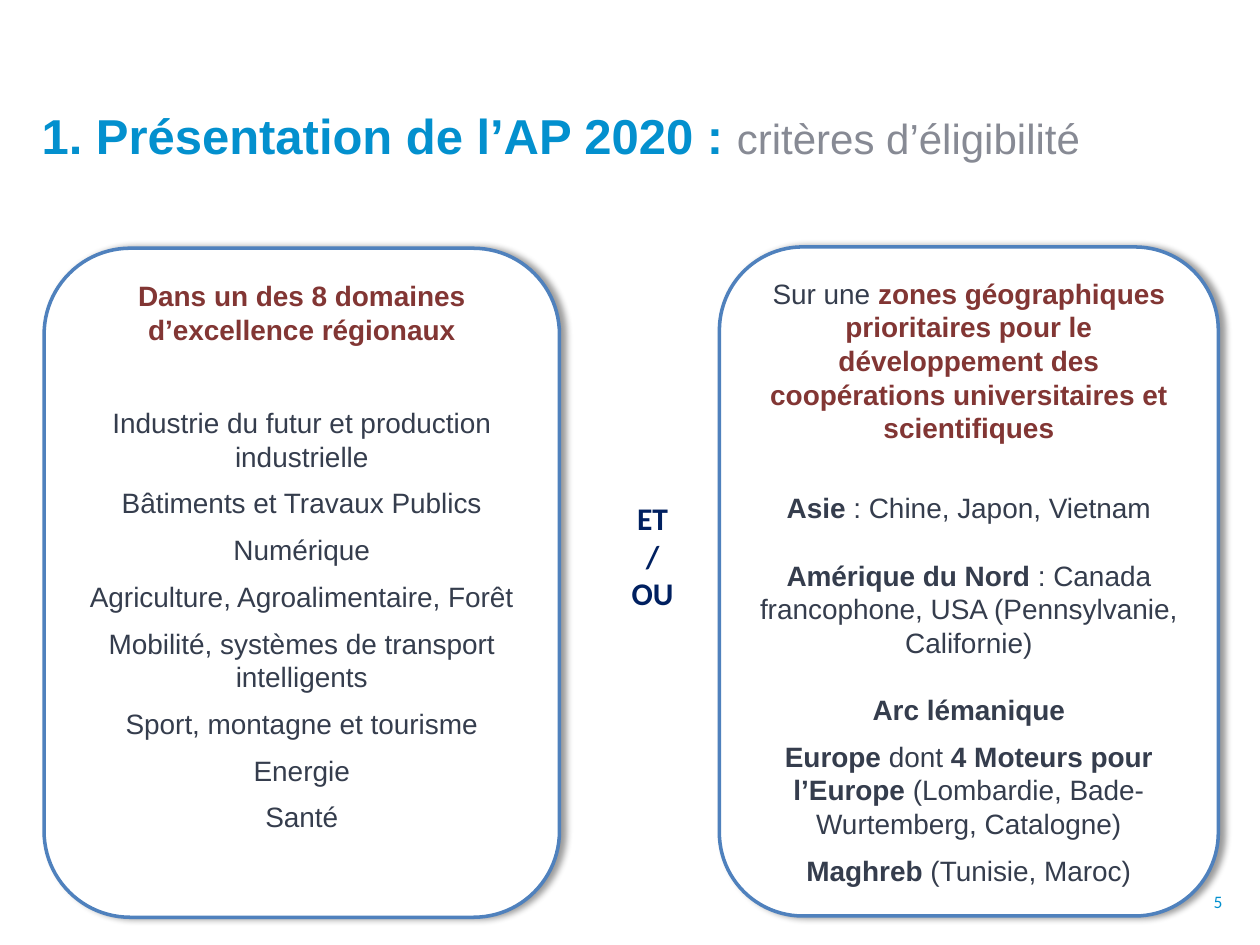
from lxml.etree import SubElement
from pptx import Presentation
from pptx.dml.color import RGBColor
from pptx.enum.shapes import MSO_SHAPE
from pptx.enum.text import MSO_ANCHOR, PP_ALIGN
from pptx.oxml.ns import qn
from pptx.util import Inches, Pt

COLORS = {
    "blue": "0390CE",
    "gray": "878A94",
    "border": "4F81BD",
    "red": "823634",
    "slate": "353D4D",
    "navy": "002060",
    "white": "FFFFFF",
    "shadow": "000000",
}


def add_text(paragraph, text, size=16, color="slate", bold=False, font="Arial"):
    run = paragraph.add_run()
    run.text = text
    run.font.name = font
    run.font.size = Pt(size)
    run.font.bold = bold
    run.font.color.rgb = RGBColor.from_string(COLORS[color])


def add_shadow(shape):
    effects = SubElement(shape.fill._xPr, qn("a:effectLst"))
    shadow = SubElement(effects, qn("a:outerShdw"), blurRad=str(Pt(4)),
                        dist=str(Pt(3)), dir="0", algn="l", rotWithShape="0")
    color = SubElement(shadow, qn("a:srgbClr"), val=COLORS["shadow"])
    SubElement(color, qn("a:alpha"), val="40000")


presentation = Presentation()
presentation.slide_width = Inches(10)
presentation.slide_height = Inches(7.5)
slide = presentation.slides.add_slide(presentation.slide_layouts[5])

title = slide.shapes.title
title.left, title.top = Inches(0.33), Inches(0.89)
title.width, title.height = Inches(9), Inches(1.25)
frame = title.text_frame
frame.word_wrap = True
frame.vertical_anchor = MSO_ANCHOR.TOP
frame.margin_left = frame.margin_right = frame.margin_top = frame.margin_bottom = 0
paragraph = frame.paragraphs[0]
paragraph.alignment = PP_ALIGN.LEFT
paragraph.line_spacing = 0.9
add_text(paragraph, "1. Présentation de l’AP 2020 : ", size=28, color="blue", bold=True)
add_text(paragraph, "critères d’éligibilité", size=24, color="gray")

number_box = slide.shapes.add_textbox(Inches(6.18), Inches(7.02), Inches(3.62), Inches(0.27))
number_box.text_frame.word_wrap = True
number_box.text_frame.vertical_anchor = MSO_ANCHOR.MIDDLE
paragraph = number_box.text_frame.paragraphs[0]
paragraph.alignment = PP_ALIGN.RIGHT
add_text(paragraph, "5", size=10, color="blue", font="Calibri")

LINE, GAP = 19.2, 7.5
strong = {"bold": True}
heading = {"bold": True, "color": "red"}

domains = [
    "Industrie du futur et production industrielle",
    "Bâtiments et Travaux Publics",
    "Numérique",
    "Agriculture, Agroalimentaire, Forêt",
    "Mobilité, systèmes de transport intelligents",
    "Sport, montagne et tourisme",
    "Energie",
    "Santé",
]
domain_paragraphs = [
    (GAP + LINE + GAP, [("Dans un des 8 domaines d’excellence régionaux", heading)]),
] + [(GAP, [(domain, {})]) for domain in domains]

zone_paragraphs = [
    (GAP + LINE, [
        ("Sur une ", {}),
        ("zones géographiques prioritaires pour le développement des "
         "coopérations universitaires et scientifiques", heading),
    ]),
    (LINE, [("Asie", strong), (" : Chine, Japon, Vietnam", {})]),
    (LINE, [
        ("Amérique du Nord", strong),
        (" : Canada francophone, USA (Pennsylvanie, Californie)", {}),
    ]),
    (GAP, [("Arc lémanique", strong)]),
    (GAP, [
        ("Europe ", strong),
        ("dont", {}),
        (" 4 Moteurs pour l’Europe", strong),
        (" (Lombardie, Bade-Wurtemberg, Catalogne)", {}),
    ]),
    (GAP, [("Maghreb", strong), (" (Tunisie, Maroc)", {})]),
]

panels = [
    (0.35, 1.97, 4.09, domain_paragraphs),
    (5.71, 1.96, 3.96, zone_paragraphs),
]
for left, top, width, contents in panels:
    panel = slide.shapes.add_shape(MSO_SHAPE.ROUNDED_RECTANGLE, Inches(left), Inches(top),
                                   Inches(width), Inches(5.31))
    panel.adjustments[0] = 0.167
    panel.fill.solid()
    panel.fill.fore_color.rgb = RGBColor.from_string(COLORS["white"])
    panel.line.color.rgb = RGBColor.from_string(COLORS["border"])
    panel.line.width = Pt(2)
    add_shadow(panel)
    frame = panel.text_frame
    frame.word_wrap = True
    frame.vertical_anchor = MSO_ANCHOR.TOP
    frame.margin_left = frame.margin_right = Inches(0.07)
    frame.margin_top = frame.margin_bottom = Inches(0.04)
    for index, (space_after, runs) in enumerate(contents):
        paragraph = frame.add_paragraph() if index else frame.paragraphs[0]
        paragraph.alignment = PP_ALIGN.CENTER
        paragraph.line_spacing = Pt(LINE)
        paragraph.space_after = Pt(space_after)
        for text, style in runs:
            add_text(paragraph, text, **style)

choice_box = slide.shapes.add_textbox(Inches(4.65), Inches(3.91), Inches(1.06), Inches(1.01))
frame = choice_box.text_frame
frame.word_wrap = True
for index, word in enumerate(["ET", "/", "OU"]):
    paragraph = frame.add_paragraph() if index else frame.paragraphs[0]
    paragraph.alignment = PP_ALIGN.CENTER
    add_text(paragraph, word, size=18, color="navy", bold=True, font="Calibri")

presentation.save("out.pptx")
